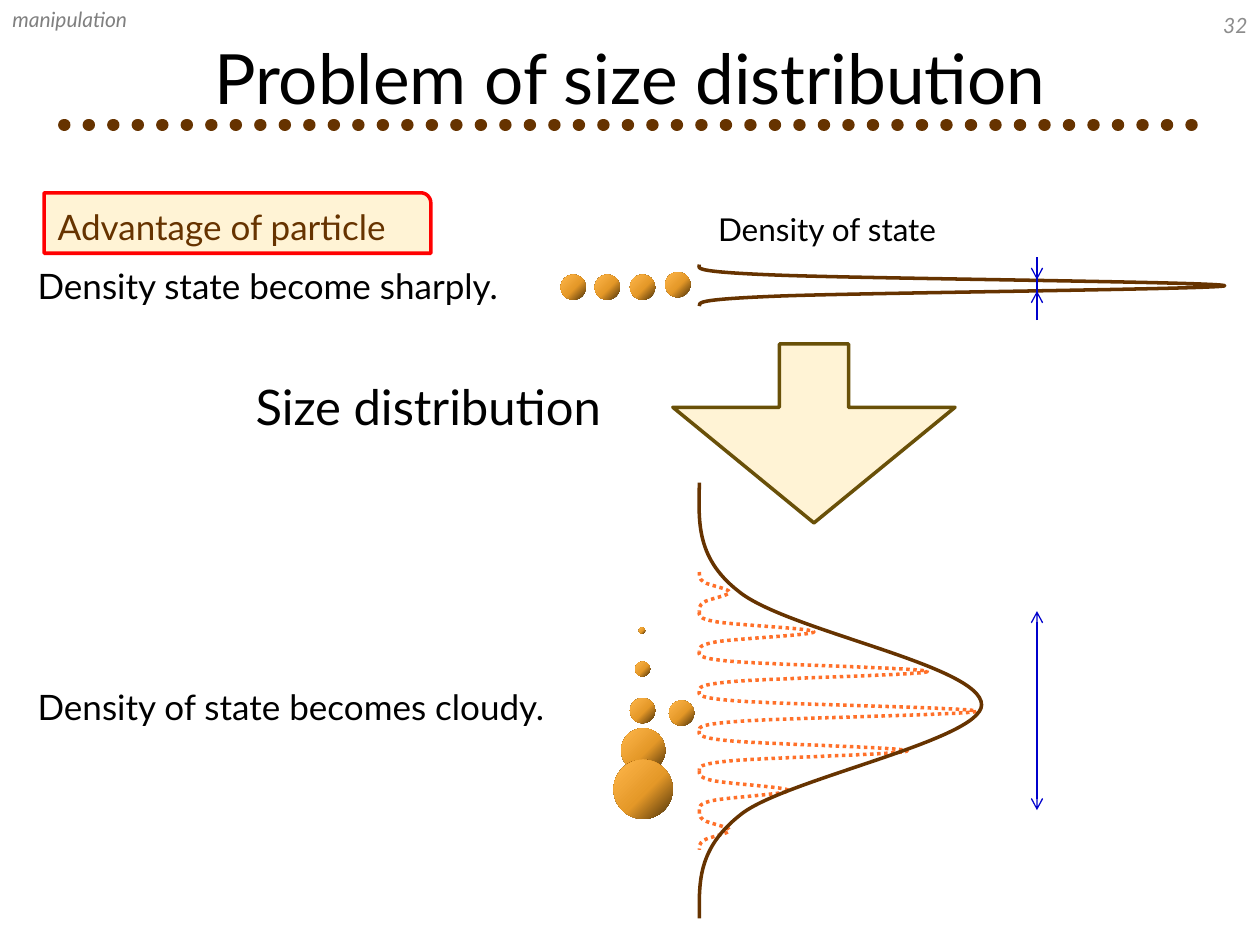
from copy import deepcopy
from dataclasses import dataclass

from lxml import etree
from pptx import Presentation
from pptx.dml.color import RGBColor
from pptx.enum.dml import MSO_LINE
from pptx.enum.shapes import MSO_CONNECTOR, MSO_SHAPE
from pptx.enum.text import MSO_ANCHOR, PP_ALIGN
from pptx.oxml.ns import qn
from pptx.util import Inches, Pt

STRAIGHT = MSO_CONNECTOR.STRAIGHT
BALL, DOWN_ARROW = MSO_SHAPE.OVAL, MSO_SHAPE.DOWN_ARROW
TAG = MSO_SHAPE.ROUND_1_RECTANGLE
DOTTED = MSO_LINE.ROUND_DOT
LEFT, CENTER, RIGHT = PP_ALIGN.LEFT, PP_ALIGN.CENTER, PP_ALIGN.RIGHT
TOP, MIDDLE = MSO_ANCHOR.TOP, MSO_ANCHOR.MIDDLE


@dataclass(frozen=True)
class Theme:
    font: str = "Lato"
    black: str = "000000"
    grey: str = "808080"
    page_grey: str = "8C8C8C"
    brown: str = "663300"
    cream: str = "FFF3D5"
    red: str = "FF0000"
    olive: str = "695008"
    orange: str = "FF7029"
    blue: str = "0000CC"
    ball: tuple = ((0, "4B3109"), (0.45, "E49828"), (1, "FFB74C"))
    title: float = 39.6
    heading: float = 28
    body: float = 20
    label: float = 18
    small: float = 12


# Upright bell as (share of width, share of reach): a start, then four Bezier curves.
BELL = [(0, 0), (0.08, 0), (0.17, -0.02), (0.25, 0.14),
        (0.34, 0.31), (0.42, 1), (0.51, 1),
        (0.59, 1), (0.68, 0.31), (0.76, 0.15),
        (0.84, -0.01), (0.92, 0), (1, 0)]


class SlideBuilder:
    def __init__(self, slide, theme):
        self.shapes = slide.shapes
        self.theme = theme

    def stroke(self, line, color, width, dash=None):
        line.color.rgb = RGBColor.from_string(color)
        line.width = Pt(width)
        if dash is not None:
            line.dash_style = dash

    def text(self, text, x, y, w, h, size, color=None, align=LEFT, anchor=TOP, italic=False):
        tf = self.shapes.add_textbox(Inches(x), Inches(y), Inches(w), Inches(h)).text_frame
        tf.word_wrap = True
        tf.vertical_anchor = anchor
        p = tf.paragraphs[0]
        p.text = text
        p.alignment = align
        p.font.name = self.theme.font
        p.font.size = Pt(size)
        p.font.italic = italic
        p.font.color.rgb = RGBColor.from_string(color or self.theme.black)

    def shape(self, kind, x, y, w, h, line, adjustments=()):
        sp = self.shapes.add_shape(kind, Inches(x), Inches(y), Inches(w), Inches(h))
        sp.shadow.inherit = False
        sp.fill.solid()
        sp.fill.fore_color.rgb = RGBColor.from_string(self.theme.cream)
        self.stroke(sp.line, line, 2)
        for i, value in enumerate(adjustments):
            sp.adjustments[i] = value

    def ball(self, x, y, size):
        sp = self.shapes.add_shape(BALL, Inches(x), Inches(y), Inches(size), Inches(size))
        sp.shadow.inherit = False
        sp.line.fill.background()
        sp.fill.gradient()
        sp.fill.gradient_angle = 135
        stops = sp._element.spPr.find(".//" + qn("a:gsLst"))
        stops.insert(1, deepcopy(stops[0]))
        for stop, (position, color) in zip(sp.fill.gradient_stops, self.theme.ball):
            stop.position = position
            stop.color.rgb = RGBColor.from_string(color)

    def line(self, x1, y1, x2, y2, color, width, dash=None, round_cap=False, arrows=()):
        """Draw a straight line; arrows may hold "headEnd" (start) and "tailEnd" (end)."""
        cxn = self.shapes.add_connector(STRAIGHT, Inches(x1), Inches(y1), Inches(x2), Inches(y2))
        self.stroke(cxn.line, color, width, dash)
        ln = cxn.line._get_or_add_ln()
        if round_cap:
            ln.set("cap", "rnd")
        for end in arrows:
            etree.SubElement(ln, qn("a:" + end), type="arrow")
        etree.SubElement(cxn._element.spPr, qn("a:effectLst"))

    def bell(self, x, y, reach, height, color, dash=None):
        """Draw an upright bell, turned to point right from a vertical base at x."""
        points = [(Inches(height * u), Inches(reach * (1 - v))) for u, v in BELL]
        builder = self.shapes.build_freeform(*points[0])
        builder.add_line_segments(points[3::3], close=False)
        sp = builder.convert_to_shape(Inches(x + (reach - height) / 2),
                                      Inches(y + (height - reach) / 2))
        segments = sp._element.spPr.findall(".//" + qn("a:lnTo"))
        for i, segment in enumerate(segments):
            segment.tag = qn("a:cubicBezTo")
            for n, (px, py) in enumerate(points[3 * i + 1:3 * i + 3]):
                segment.insert(n, segment.makeelement(qn("a:pt"), {"x": str(px), "y": str(py)}))
        sp.rotation = 90
        sp.shadow.inherit = False
        sp.fill.background()
        self.stroke(sp.line, color, 2, dash)


def main():
    prs = Presentation()
    prs.slide_width, prs.slide_height = Inches(10), Inches(7.5)
    theme = Theme()
    s = SlideBuilder(prs.slides.add_slide(prs.slide_layouts[6]), theme)

    # Header
    s.line(0.51, 0.99, 9.49, 0.99, theme.brown, 7, DOTTED, round_cap=True)
    s.text("Problem of size distribution", 0.5, 0.22, 9, 0.78, theme.title,
           align=CENTER, anchor=MIDDLE)
    s.text("32", 7.67, 0, 2.33, 0.4, theme.small, theme.page_grey, RIGHT, MIDDLE, italic=True)
    s.text("manipulation", 0, 0, 2.36, 0.44, theme.small, theme.grey, italic=True)

    # Sharp density of state
    s.shape(TAG, 0.35, 1.53, 3.07, 0.48, theme.red)
    s.text("Advantage of particle", 0.36, 1.58, 3.15, 0.44, theme.body, theme.brown)
    s.text("Density state become sharply.", 0.2, 2.05, 4.23, 0.44, theme.body)
    s.text("Density of state", 5.6, 1.62, 2.19, 0.4, theme.label)
    base = 5.55
    s.bell(base, 2.1, 4.17, 0.33, theme.brown)

    # Broad density of state, made of narrow peaks
    peak_height = 0.315
    for i, reach in enumerate((0.24, 0.91, 1.81, 2.2, 1.65, 0.71, 0.24)):
        s.bell(base, 4.54 + i * peak_height, reach, peak_height, theme.orange, DOTTED)
    s.bell(base, 3.83, 2.24, 3.46, theme.brown)
    s.text("Density of state becomes cloudy.", 0.2, 5.39, 4.64, 0.44, theme.body)

    # Peak widths
    width_x = 8.23
    for start, end, arrows in ((2.04, 2.22, ["tailEnd"]),
                               (2.54, 2.31, ["tailEnd"]),
                               (2.1, 2.41, []),
                               (4.85, 6.43, ["headEnd", "tailEnd"])):
        s.line(width_x, start, width_x, end, theme.blue, 0.75, arrows=arrows)

    # Step from sharp to broad
    s.shape(DOWN_ARROW, 5.34, 2.73, 2.24, 1.42, theme.olive, (0.245, 0.646))
    s.text("Size distribution", 1.93, 2.94, 3.33, 0.57, theme.heading)

    # Particles: equal above, of mixed size below
    for x, y, size in ((5.28, 2.16, 0.2), (5, 2.18, 0.2), (4.72, 2.18, 0.2), (4.45, 2.18, 0.2),
                       (5, 5.54, 0.2), (5.31, 5.56, 0.2), (4.93, 5.78, 0.35),
                       (5.04, 5.25, 0.12), (5.07, 4.98, 0.05), (4.87, 6.03, 0.47)):
        s.ball(x, y, size)

    prs.save("out.pptx")


if __name__ == "__main__":
    main()
